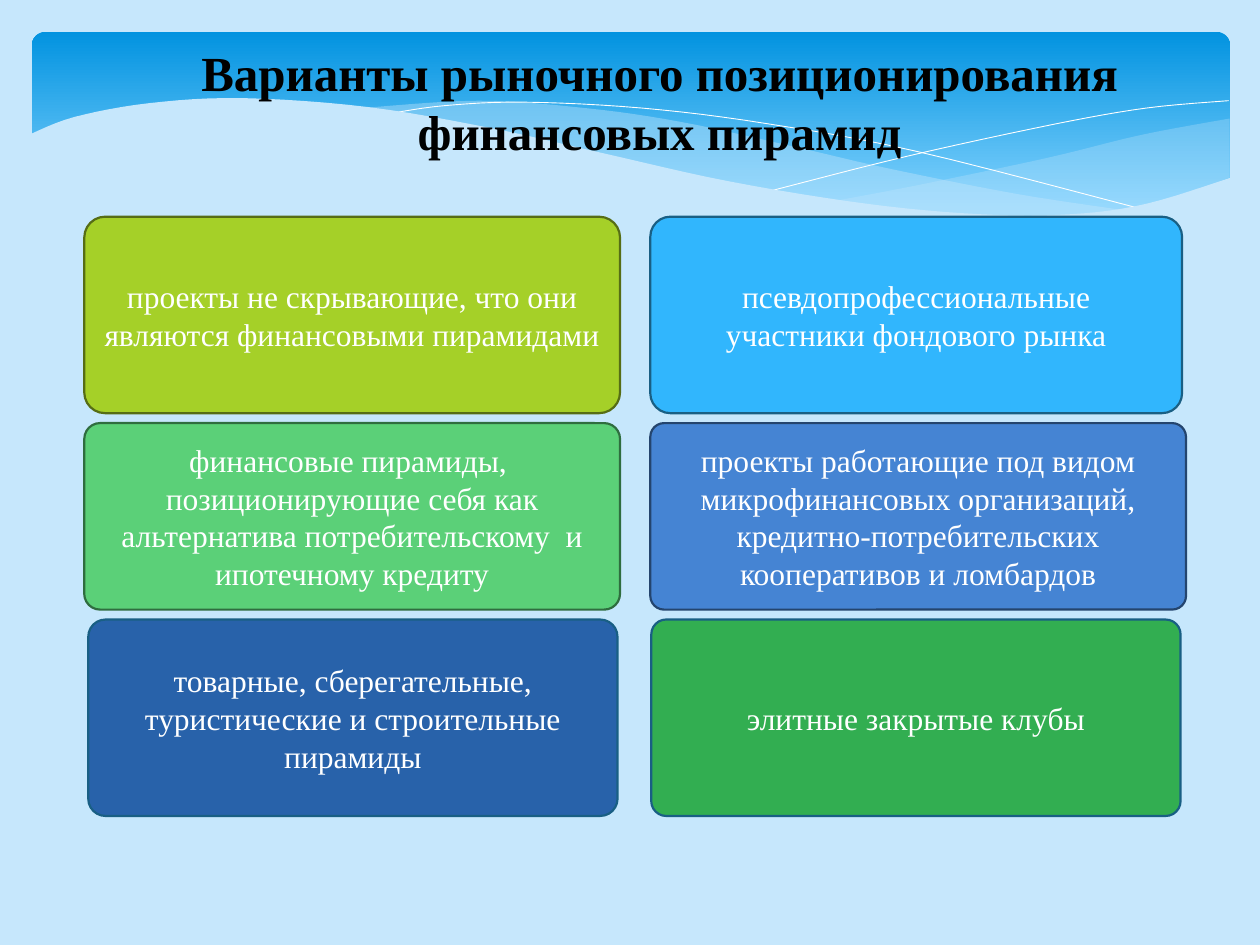
from lxml import etree
from pptx import Presentation
from pptx.dml.color import RGBColor
from pptx.enum.shapes import MSO_SHAPE
from pptx.enum.text import MSO_ANCHOR, PP_ALIGN
from pptx.oxml.ns import qn
from pptx.util import Cm, Pt

ROUNDED = MSO_SHAPE.ROUNDED_RECTANGLE
MIDDLE = MSO_ANCHOR.MIDDLE
CENTER = PP_ALIGN.CENTER
FONT = "Times New Roman"
COLORS = {
    "background": "C6E7FC", "band_top": "0293E0", "band_bottom": "83D3FE",
    "white": "FFFFFF", "black": "000000",
    "lime": "A5D028", "lime_edge": "566D15", "sky": "31B6FD", "sky_edge": "195F84",
    "mint": "5BD078", "mint_edge": "2F6D3F", "blue": "4584D3", "blue_edge": "24456E",
    "navy": "2862AA", "green": "32AE51",
}
RGB = {name: RGBColor.from_string(value) for name, value in COLORS.items()}


def smooth(points, steps=6):
    """Catmull-Rom curve through the points, in cm."""
    ends = [points[0], *points, points[-1]]
    curve = [points[0]]
    for a, b, c, d in zip(ends, ends[1:], ends[2:], ends[3:]):
        for i in range(1, steps + 1):
            t = i / steps
            curve.append(tuple(
                (2 * q + (r - p) * t + (2 * p - 5 * q + 4 * r - u) * t ** 2
                 + (3 * q - p - 3 * r + u) * t ** 3) / 2
                for p, q, r, u in zip(a, b, c, d)))
    return curve


def add_text(p, text, size, color, bold=False):
    p.alignment = CENTER
    r = p.add_run()
    r.text = text
    r.font.name = FONT
    r.font.size = Pt(size)
    r.font.bold = bold
    r.font.color.rgb = RGB[color]


prs = Presentation()
prs.slide_width, prs.slide_height = Cm(25.4), Cm(19.05)
s = prs.slides.add_slide(prs.slide_layouts[6])
s.background.fill.solid()
s.background.fill.fore_color.rgb = RGB["background"]

# Gradient band
band = s.shapes.add_shape(ROUNDED, Cm(0.64), Cm(0.64), Cm(24.16), Cm(3.96))
band.adjustments[0] = 0.071
band.shadow.inherit = False
band.line.fill.background()
band.fill.gradient()
band.fill.gradient_angle = 270
for stop, color, position in zip(band.fill.gradient_stops,
                                 ("band_top", "band_bottom"), (0, 0.9)):
    stop.color.rgb = RGB[color]
    stop.position = position

# Waves: outline, opacity in percent (None for an open white line)
right_wave = (
    smooth([(24.79, 2.39), (23.01, 2.72), (21.13, 3.18), (18.52, 3.73), (16.79, 4.06)])
    + smooth([(16.79, 4.06), (19.23, 4.32), (20.93, 4.37), (22.6, 4.22),
              (23.75, 3.96), (24.79, 3.58)]))
middle_wave = (
    smooth([(22.68, 4.24), (20.5, 3.91), (17.93, 3.4), (15.98, 2.95),
            (13.74, 2.46), (11.81, 2.18), (9.65, 2.03), (7.26, 2.18)])
    + smooth([(7.26, 2.18), (9.19, 2.46), (11.4, 2.95), (14.38, 3.63),
              (16.89, 4.09), (19, 4.32), (20.78, 4.39), (22.68, 4.24)]))
falling_line = smooth([(7.85, 2.29), (8.97, 2.13), (10.57, 2.06), (12.95, 2.18),
                       (15.44, 2.49), (18.47, 3.05), (23.04, 4.22)])
rising_line = smooth([(15.57, 3.84), (18.29, 3.15), (21.23, 2.51),
                      (23.11, 2.18), (24.77, 2.03)])
front_wave = smooth([(0.58, 2.72), (1.5, 2.36), (3.02, 2.08), (4.9, 1.98),
                     (7.42, 2.16), (9.93, 2.59), (12.07, 3.07), (14.71, 3.66),
                     (17.48, 4.11), (19.76, 4.32), (21.59, 4.32), (23.11, 4.11),
                     (24.82, 3.58)]) + [(24.82, 5.69), (0.58, 5.69)]

for outline, opacity in ((right_wave, 29), (middle_wave, 40), (falling_line, None),
                         (rising_line, None), (front_wave, 100)):
    points = [(Cm(x), Cm(y)) for x, y in outline]
    builder = s.shapes.build_freeform(*points[0])
    builder.add_line_segments(points[1:], close=opacity is not None)
    sp = builder.convert_to_shape()
    sp.shadow.inherit = False
    if opacity is None:
        sp.fill.background()
        sp.line.color.rgb = RGB["white"]
        sp.line.width = Pt(0.5)
        continue
    sp.line.fill.background()
    sp.fill.solid()
    sp.fill.fore_color.rgb = RGB["background"]
    if opacity < 100:
        clr = sp.fill._xPr.find(qn("a:solidFill"))[0]
        etree.SubElement(clr, qn("a:alpha"), val=str(opacity * 1000))

# Title
tf = s.shapes.add_textbox(Cm(3.3), Cm(0.74), Cm(19.99), Cm(2.64)).text_frame
tf.word_wrap = True
add_text(tf.paragraphs[0], "Варианты рыночного позиционирования финансовых пирамид",
         28, "black", bold=True)

# Cards by row: left, width, corner, fill, edge, paragraphs
rows = [
    (3.96, [
        (1.7, 10.8, 0.106, "lime", "lime_edge",
         ["проекты не скрывающие, что они являются финансовыми пирамидами"]),
        (13.11, 10.72, 0.102, "sky", "sky_edge",
         ["псевдопрофессиональные участники фондового рынка"])]),
    (3.76, [
        (1.7, 10.8, 0.085, "mint", "mint_edge",
         ["финансовые пирамиды, ",
          "позиционирующие себя как альтернатива потребительскому  и ипотечному кредиту"]),
        (13.11, 10.8, 0.074, "blue", "blue_edge",
         ["проекты работающие под видом микрофинансовых организаций,",
          "кредитно-потребительских кооперативов и ломбардов"])]),
    (3.96, [
        (1.78, 10.67, 0.088, "navy", "sky_edge",
         ["товарные, сберегательные, туристические и строительные пирамиды"]),
        (13.13, 10.67, 0.076, "green", "sky_edge", ["элитные закрытые клубы"])]),
]
top, gap = 4.37, 0.2
for height, cards in rows:
    for left, width, corner, fill, edge, texts in cards:
        sp = s.shapes.add_shape(ROUNDED, Cm(left), Cm(top), Cm(width), Cm(height))
        sp.adjustments[0] = corner
        sp.shadow.inherit = False
        sp.fill.solid()
        sp.fill.fore_color.rgb = RGB[fill]
        sp.line.color.rgb = RGB[edge]
        sp.line.width = Pt(1.25)
        tf = sp.text_frame
        tf.word_wrap = True
        tf.vertical_anchor = MIDDLE
        for i, text in enumerate(texts):
            p = tf.add_paragraph() if i else tf.paragraphs[0]
            add_text(p, text, 18, "white")
    top += height + gap

prs.save("out.pptx")
